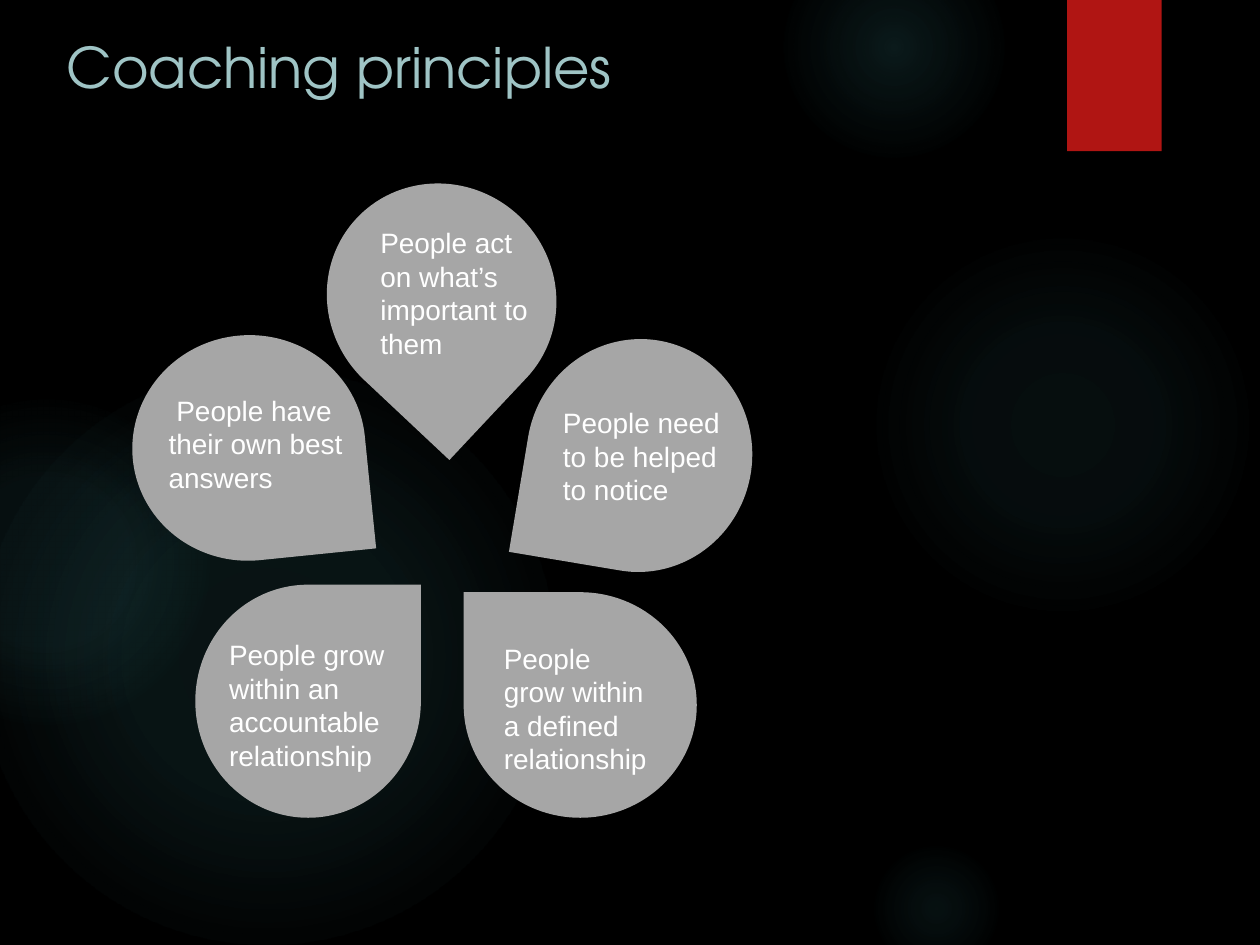
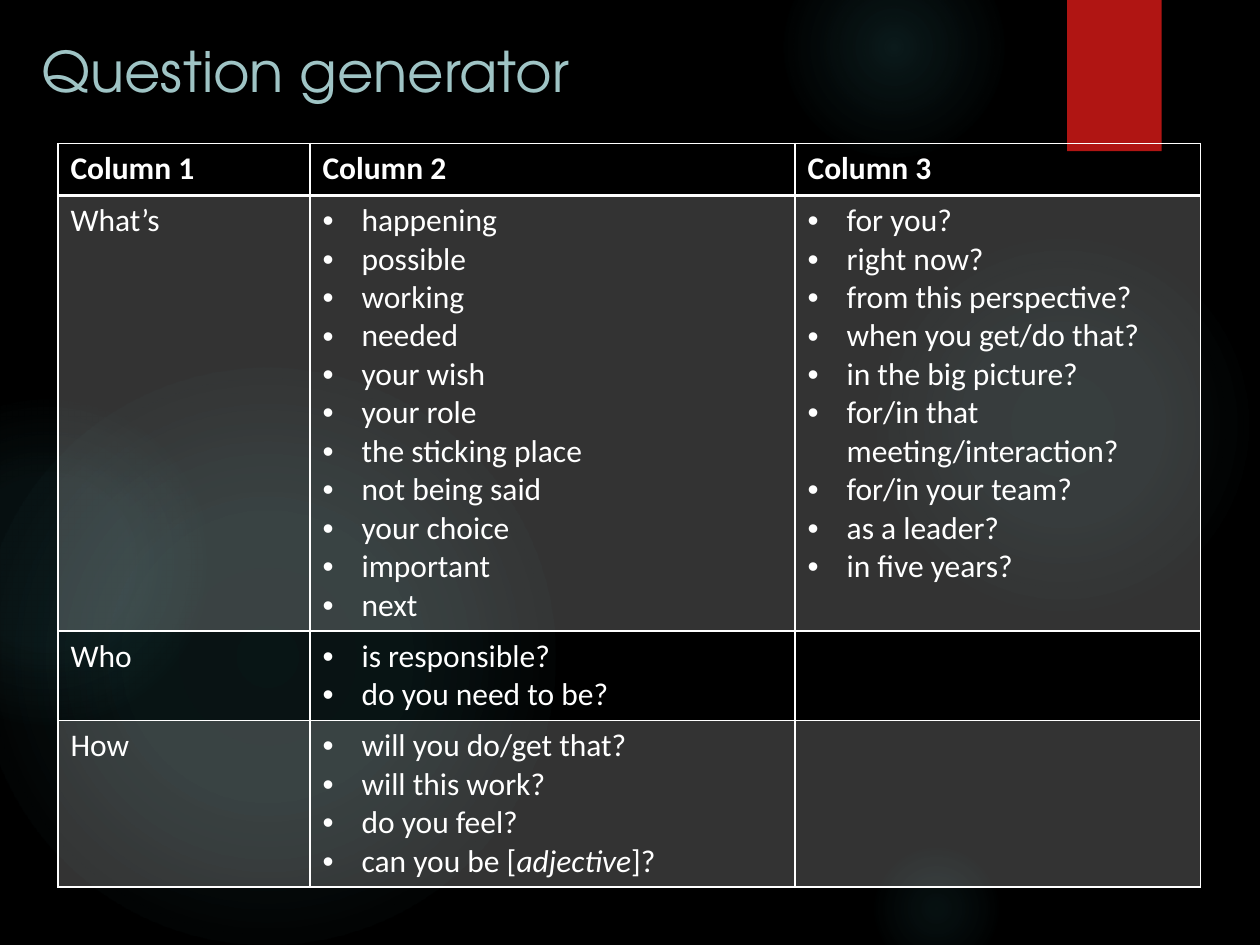
from pptx import Presentation
from pptx.dml.color import RGBColor
from pptx.enum import shapes as kinds, text as texts
from pptx.oxml import parse_xml
from pptx.oxml.ns import nsdecls, qn
from pptx.util import Inches, Pt

BLACK, WHITE, RED, GREY = "000000", "FFFFFF", "B01513", "A6A6A6"
PALE, GLOW = "9FC4C5", "50B9C1"
HEAD, BODY, CELL = "TeX Gyre Adventor", "Arial", "Calibri"

# left, top, diameter, then (position, opacity) stops in percent
GLOWS = [
    (6.89, 1.83, 3.08, [(0, 7), (36, 6), (69, 0)]),
    (6.22, -0.5, 1.75, [(0, 14), (36, 7), (73, 0)]),
    (6.89, 6.67, 1.08, [(0, 9), (36, 5), (66, 0)]),
    (-0.17, 2.92, 4.58, [(0, 11), (36, 10), (75, 0)]),
    (-0.92, 3.17, 2.58, [(0, 8), (36, 8), (72, 0)]),
]

# petal left and top, rotation, then text left, top, width and height in the petal
PETALS = [
    ("People grow within an accountable relationship",
     0.55, 3.24, 0, (0.17, 0.37, 1.83, 1.18)),
    ("People grow within a defined relationship",
     2.71, 3.27, 270, (0.19, 0.37, 1.42, 1.18)),
    ("People need to be helped to notice",
     3.18, 1.29, 189.5, (0.19, 0.48, 1.5, 0.85)),
    ("People act on what’s important to them",
     1.61, 0.04, 133.2, (0.31, 0.3, 1.38, 1.18)),
    (" People have their own best answers",
     0.08, 1.23, 84.2, (0.16, 0.44, 1.75, 0.85)),
]

ROWS = [
    (["Column 1"], ["Column 2"], ["Column 3"]),
    (["What’s"],
     ["happening", "possible", "working", "needed", "your wish", "your role",
      "the sticking place", "not being said", "your choice", "important", "next"],
     ["for you?", "right now?", "from this perspective?", "when you get/do that?",
      "in the big picture?", "for/in that meeting/interaction?",
      "for/in your team?", "as a leader?", "in five years?"]),
    (["Who"], ["is responsible?", "do you need to be?"], []),
    (["How"],
     ["will you do/get that?", "will this work?", "do you feel?",
      "can you be [*adjective*]?"], []),
]
WIDTHS = [2, 3.85, 3.22]
HEIGHTS = [0.41, 3.45, 0.71, 1.24]


def rgb(code):
    return RGBColor.from_string(code)


def inches(*sizes):
    return [Inches(size) for size in sizes]


def write(frame, lines, size=16, font=BODY, color=WHITE, bold=False, gap=0, bullet=False):
    """Fill a text frame, one paragraph a line; words between asterisks are italic."""
    frame.word_wrap = True
    for i, line in enumerate(lines):
        para = frame.add_paragraph() if i else frame.paragraphs[0]
        para.alignment = texts.PP_ALIGN.LEFT
        para.space_before = para.space_after = Pt(gap)
        if bullet:
            dot(para)
        for j, part in enumerate(line.split("*")):
            run = para.add_run()
            run.text = part
            run.font.size, run.font.name = Pt(size), font
            run.font.bold, run.font.italic = bold, j % 2 == 1
            run.font.color.rgb = rgb(color)


def dot(para):
    """Give a paragraph a hanging bullet."""
    props = para._p.get_or_add_pPr()
    props.set("marL", str(Inches(0.31)))
    props.set("indent", str(-Inches(0.31)))
    props.append(parse_xml(f'<a:buFont {nsdecls("a")} typeface="Arial"/>'))
    props.append(parse_xml(f'<a:buChar {nsdecls("a")} char="•"/>'))


def draw(group, kind, box, fill=None):
    shape = group.add_shape(kind, *inches(*box))
    shape.shadow.inherit = False
    shape.line.fill.background()
    if fill:
        shape.fill.solid()
        shape.fill.fore_color.rgb = rgb(fill)
    else:
        shape.fill.background()
    return shape


def glow(shape, stops):
    """Fill a shape with a round, fading gradient."""
    marks = "".join(
        f'<a:gs pos="{pos * 1000}"><a:srgbClr val="{GLOW}">'
        f'<a:alpha val="{alpha * 1000}"/></a:srgbClr></a:gs>' for pos, alpha in stops)
    fade = parse_xml(
        f'<a:gradFill {nsdecls("a")}><a:gsLst>{marks}</a:gsLst><a:path path="circle">'
        '<a:fillToRect l="50000" t="50000" r="50000" b="50000"/></a:path></a:gradFill>')
    props = shape.element.spPr
    props.replace(props.find(qn("a:noFill")), fade)


def shade(shape):
    """Drop a soft shadow straight down."""
    shape.element.spPr.find(qn("a:effectLst")).append(parse_xml(
        f'<a:outerShdw {nsdecls("a")} blurRad="{Pt(3)}" dist="{Pt(2)}" dir="5400000">'
        f'<a:srgbClr val="{BLACK}"><a:alpha val="45000"/></a:srgbClr></a:outerShdw>'))


def dress(master, slide):
    """Draw the shared backdrop by way of a slide and move it to the master."""
    fill = master.background.fill
    fill.solid()
    fill.fore_color.rgb = rgb(BLACK)
    parts = []
    for left, top, size, stops in GLOWS:
        disc = draw(slide.shapes, kinds.MSO_SHAPE.OVAL, (left, top, size, size))
        glow(disc, stops)
        parts.append(disc)
    band = draw(slide.shapes, kinds.MSO_SHAPE.RECTANGLE, (8.47, 0, 0.75, 1.2), RED)
    shade(band)
    for i, part in enumerate(parts + [band]):
        part.element.nvSpPr.cNvPr.set("id", str(101 + i))
        master.shapes.element.append(part.element)


def head(slide, title, box):
    shape = slide.shapes.title
    shape.left, shape.top, shape.width, shape.height = inches(*box)
    frame = shape.text_frame
    frame.auto_size = texts.MSO_AUTO_SIZE.NONE
    frame.vertical_anchor = texts.MSO_ANCHOR.TOP
    write(frame, [title], size=32, font=HEAD, color=PALE)


def bloom(slide, left, top):
    """Draw the ring of petals from its top left corner."""
    group = slide.shapes.add_group_shape().shapes
    for words, x, y, turn, (dx, dy, wide, high) in PETALS:
        x, y = left + x, top + y
        petal = draw(group, kinds.MSO_SHAPE.TEAR, (x, y, 1.79, 1.85), GREY)
        petal.rotation = turn
        label = group.add_textbox(*inches(x + dx, y + dy, wide, high))
        label.text_frame.auto_size = texts.MSO_AUTO_SIZE.SHAPE_TO_FIT_TEXT
        write(label.text_frame, [words], gap=5)


def edge(cell, row):
    """Rule a cell in white, with a heavier line below the header."""
    wide = {"L": 1, "R": 1, "T": 2 if row == 1 else 1, "B": 2 if row == 0 else 1}
    props = cell._tc.get_or_add_tcPr()
    for i, (side, points) in enumerate(wide.items()):
        props.insert(i, parse_xml(
            f'<a:ln{side} {nsdecls("a")} w="{Pt(points)}"><a:solidFill>'
            f'<a:srgbClr val="{WHITE}"/></a:solidFill></a:ln{side}>'))


def tint(cell, row):
    """Veil every other row in thin white."""
    if row % 2 == 0:
        cell.fill.background()
        return
    cell.fill.solid()
    cell.fill.fore_color.rgb = rgb(WHITE)
    color = cell._tc.tcPr.find(f'{qn("a:solidFill")}/{qn("a:srgbClr")}')
    color.append(parse_xml(f'<a:alpha {nsdecls("a")} val="20000"/>'))


def grid(slide, left, top):
    box = inches(left, top, sum(WIDTHS), sum(HEIGHTS))
    table = slide.shapes.add_table(len(ROWS), len(WIDTHS), *box).table
    table.horz_banding = table.first_row = False
    for col, wide in zip(table.columns, WIDTHS):
        col.width = Inches(wide)
    for i, (row, high) in enumerate(zip(ROWS, HEIGHTS)):
        table.rows[i].height = Inches(high)
        for j, lines in enumerate(row):
            cell = table.cell(i, j)
            tint(cell, i)
            edge(cell, i)
            write(cell.text_frame, lines, size=18, font=CELL, bold=i == 0,
                  bullet=i > 0 and j > 0)


def main():
    deck = Presentation()
    deck.slide_width, deck.slide_height = inches(10, 7.5)
    layout = deck.slide_layouts.get_by_name("Title Only")

    slide = deck.slides.add_slide(layout)
    dress(deck.slide_master, slide)
    head(slide, "Coaching principles", (0.43, 0.21, 9.22, 1.5))
    bloom(slide, 1, 1.4)

    slide = deck.slides.add_slide(layout)
    head(slide, "Question generator", (0.23, 0.24, 5.99, 1.2))
    grid(slide, 0.46, 1.14)

    deck.save("out.pptx")


if __name__ == "__main__":
    main()
